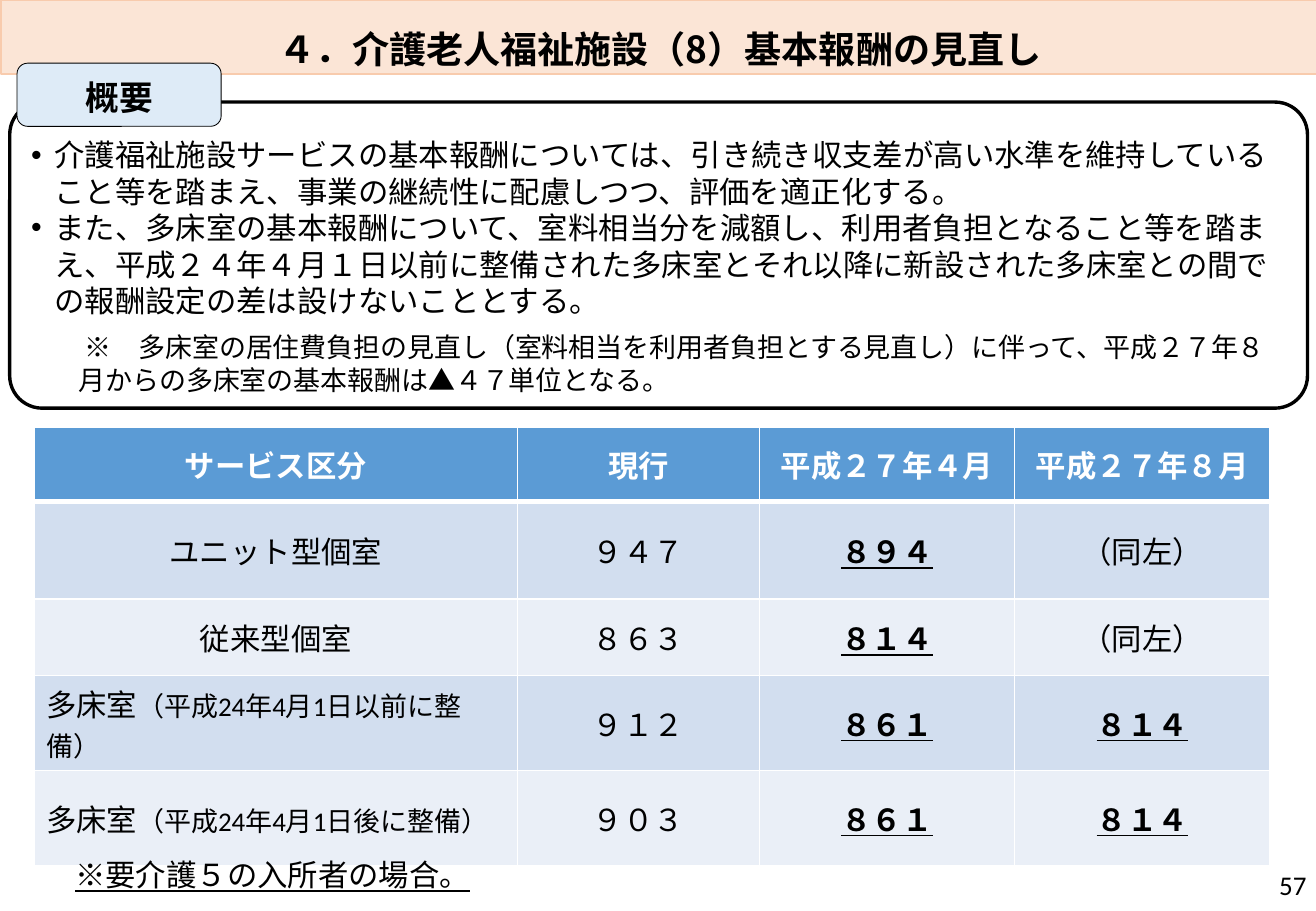
from dataclasses import dataclass
from typing import Optional

from lxml.etree import SubElement
from pptx import Presentation
from pptx.dml.color import RGBColor
from pptx.enum.shapes import MSO_SHAPE as Shape
from pptx.enum.text import MSO_ANCHOR as Anchor, PP_ALIGN as Align
from pptx.oxml.ns import qn
from pptx.util import Inches, Pt


@dataclass(frozen=True)
class Theme:
    black: str = "000000"
    white: str = "FFFFFF"
    title_fill: str = "FBE5D6"
    title_line: str = "F8CBAD"
    label_fill: str = "DEEBF7"
    header: str = "5B9BD5"
    bands: tuple[str, str] = ("D2DEEF", "EAEFF7")
    latin: str = "Calibri"
    cjk: str = "Noto Sans CJK JP"
    title: float = 22
    label: float = 20
    body: float = 18
    small: float = 16


T = Theme()


@dataclass(frozen=True)
class Run:
    text: str
    size: float = T.body
    bold: bool = False
    underline: bool = False
    color: str = T.black
    font: str = T.latin


@dataclass(frozen=True)
class Para:
    runs: tuple[Run, ...]
    align: Align = Align.LEFT
    margin: float = 0
    indent: float = 0
    bullet: bool = False
    before: float = 0
    leading: Optional[float] = None


@dataclass(frozen=True)
class Panel:
    kind: Shape
    box: tuple[float, float, float, float]
    line: str
    width: float
    paras: tuple[Para, ...]
    fill: Optional[str] = None
    corner: Optional[float] = None
    bottom: float = 0.05


def rgb(color: str) -> RGBColor:
    return RGBColor.from_string(color)


def write(tf, paras: tuple[Para, ...], anchor: Optional[Anchor] = None) -> None:
    tf.word_wrap = True
    if anchor is not None:
        tf.vertical_anchor = anchor
    for i, para in enumerate(paras):
        p = tf.paragraphs[0] if i == 0 else tf.add_paragraph()
        p.alignment = para.align
        p.space_before = Pt(para.before)
        if para.leading:
            p.line_spacing = Pt(para.leading)
        pPr = p._p.get_or_add_pPr()
        pPr.set("marL", str(Inches(para.margin)))
        pPr.set("indent", str(Inches(para.indent)))
        if para.bullet:
            SubElement(pPr, qn("a:buFont"), typeface="Arial")
            SubElement(pPr, qn("a:buChar"), char="•")
        for run in para.runs:
            r = p.add_run()
            r.text = run.text
            f = r.font
            f.size, f.bold, f.underline = Pt(run.size), run.bold, run.underline
            f.color.rgb = rgb(run.color)
            f.name = run.font
            SubElement(r._r.get_or_add_rPr(), qn("a:ea"), typeface=T.cjk)


def add_panel(shapes, panel: Panel) -> None:
    sp = shapes.add_shape(panel.kind, *map(Inches, panel.box))
    sp.shadow.inherit = False
    if panel.corner is not None:
        sp.adjustments[0] = panel.corner
    if panel.fill:
        sp.fill.solid()
        sp.fill.fore_color.rgb = rgb(panel.fill)
    else:
        sp.fill.background()
    sp.line.color.rgb = rgb(panel.line)
    sp.line.width = Pt(panel.width)
    sp.text_frame.margin_bottom = Inches(panel.bottom)
    write(sp.text_frame, panel.paras, Anchor.BOTTOM)


def add_text(shapes, box: tuple[float, float, float, float], para: Para,
             anchor: Anchor, top: float = 0.05) -> None:
    tf = shapes.add_textbox(*map(Inches, box)).text_frame
    tf.margin_top = Inches(top)
    write(tf, (para,), anchor)


def style_cell(cell, fill: str, top: float, bottom: float) -> None:
    """Give the cell white borders (widths in points) and a solid fill."""
    tcPr = cell._tc.get_or_add_tcPr()
    for side, width in (("L", 1), ("R", 1), ("T", top), ("B", bottom)):
        ln = SubElement(tcPr, qn(f"a:ln{side}"), w=str(Pt(width)))
        SubElement(SubElement(ln, qn("a:solidFill")), qn("a:srgbClr"), val=T.white)
    cell.fill.solid()
    cell.fill.fore_color.rgb = rgb(fill)
    cell.vertical_anchor = Anchor.MIDDLE


def centred(text: str, **style) -> Para:
    return Para((Run(text, **style),), Align.CENTER)


def fee(text: str) -> Para:
    return centred(text, bold=True, underline=True)


def shared_room(period: str) -> Para:
    return Para((Run("多床室"), Run(period, T.small)))


def point(text: str) -> Para:
    return Para((Run(text),), margin=0.19, indent=-0.19, bullet=True, leading=21.6)


SAME = centred("（同左）")
COLUMNS = (3.98, 1.99, 2.1, 2.1)
ROW_HEIGHTS = (0.61, 0.8, 0.63, 0.61, 0.61)
HEADINGS = ("サービス区分", "現行", "平成２７年４月", "平成２７年８月")
ROWS = (
    tuple(centred(h, bold=True, color=T.white) for h in HEADINGS),
    (centred("ユニット型個室"), centred("９４７"), fee("８９４"), SAME),
    (centred("従来型個室"), centred("８６３"), fee("８１４"), SAME),
    (shared_room("（平成24年4月1日以前に整備）"), centred("９１２"), fee("８６１"), fee("８１４")),
    (shared_room("（平成24年4月1日後に整備）"), centred("９０３"), fee("８６１"), fee("８１４")),
)

TITLE = Panel(
    Shape.RECTANGLE, (0.01, 0, 10.84, 0.61), T.title_line, 1,
    (centred("４．介護老人福祉施設（8）基本報酬の見直し", size=T.title, bold=True, font=T.cjk),),
    fill=T.title_fill, bottom=0.03)
SUMMARY = Panel(
    Shape.ROUNDED_RECTANGLE, (0.08, 0.84, 10.68, 2.52), T.black, 2,
    (point("介護福祉施設サービスの基本報酬については、引き続き収支差が高い水準を維持していること等を踏まえ、"
           "事業の継続性に配慮しつつ、評価を適正化する。"),
     point("また、多床室の基本報酬について、室料相当分を減額し、利用者負担となること等を踏まえ、"
           "平成２４年４月１日以前に整備された多床室とそれ以降に新設された多床室との間での"
           "報酬設定の差は設けないこととする。"),
     Para((Run("※　多床室の居住費負担の見直し（室料相当を利用者負担とする見直し）に伴って、"
               "平成２７年８月からの多床室の基本報酬は▲４７単位となる。", T.small),),
          margin=0.39, indent=0.05, before=6, leading=20)),
    corner=0.106, bottom=0.02)
LABEL = Panel(
    Shape.ROUNDED_RECTANGLE, (0.14, 0.52, 1.68, 0.52), T.black, 0.5,
    (centred("概要", size=T.label, bold=True, font=T.cjk),), fill=T.label_fill)


def add_fee_table(shapes) -> None:
    table = shapes.add_table(len(ROWS), len(COLUMNS), Inches(0.28), Inches(3.52),
                             Inches(sum(COLUMNS)), Inches(sum(ROW_HEIGHTS))).table
    table.first_row = table.horz_banding = False
    for column, width in zip(table.columns, COLUMNS):
        column.width = Inches(width)
    for i, (paras, height) in enumerate(zip(ROWS, ROW_HEIGHTS)):
        table.rows[i].height = Inches(height)
        fill = T.bands[(i - 1) % 2] if i else T.header
        for j, para in enumerate(paras):
            cell = table.cell(i, j)
            style_cell(cell, fill, top=3 if i == 1 else 1, bottom=3 if i == 0 else 1)
            write(cell.text_frame, (para,))


def main() -> None:
    prs = Presentation()
    prs.slide_width, prs.slide_height = Inches(10.83), Inches(7.5)
    shapes = prs.slides.add_slide(prs.slide_layouts[6]).shapes
    add_panel(shapes, TITLE)
    add_panel(shapes, SUMMARY)
    add_fee_table(shapes)
    add_text(shapes, (0.52, 7.05, 5.64, 0.4),
             Para((Run("※要介護５の入所者の場合。", underline=True),)), Anchor.TOP, top=0)
    add_panel(shapes, LABEL)
    add_text(shapes, (10.1, 7.14, 0.75, 0.29),
             Para((Run("57", T.small),), Align.RIGHT), Anchor.MIDDLE)
    prs.save("out.pptx")


if __name__ == "__main__":
    main()
